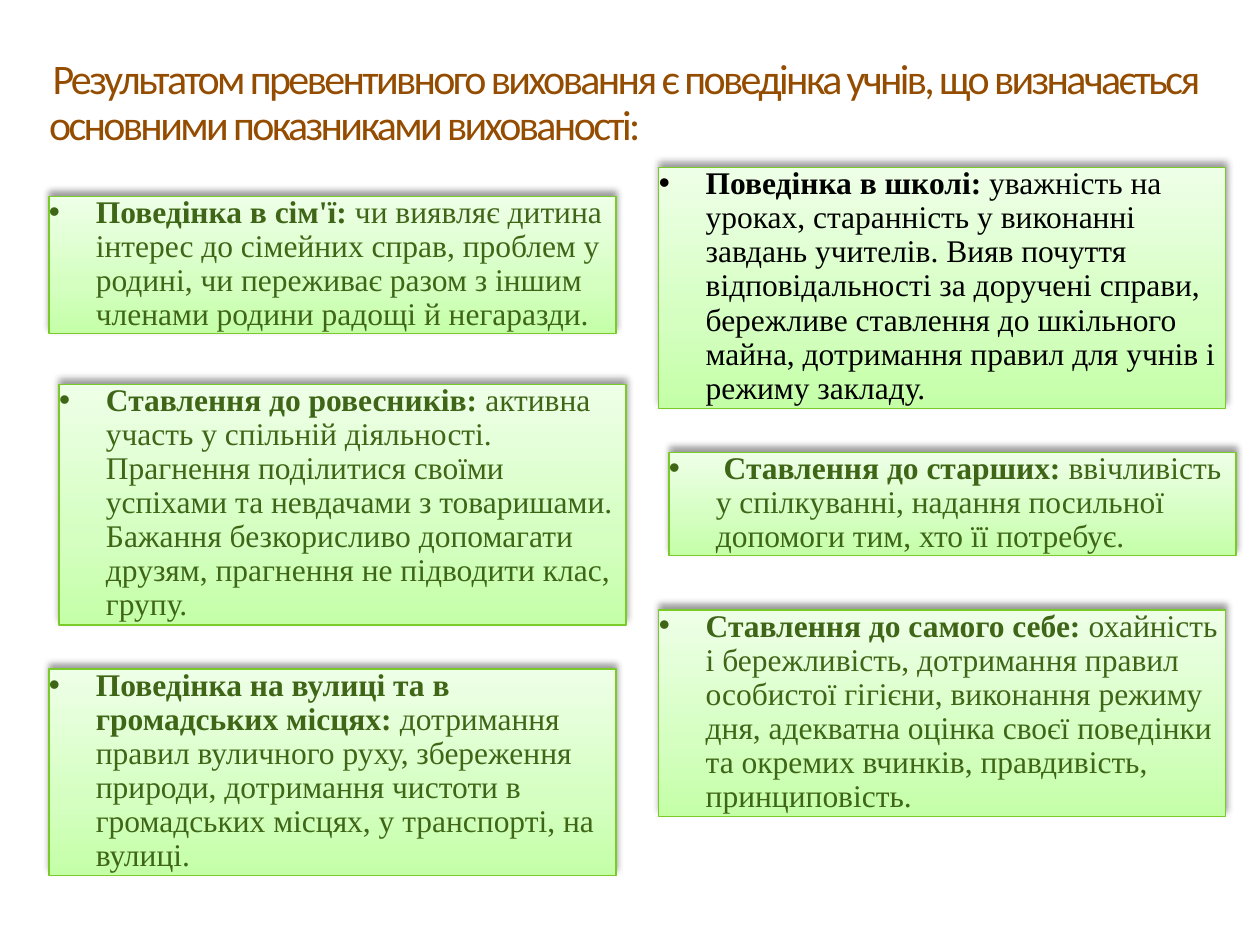
"""Build a slide on the behaviour signs that show a pupil's upbringing."""
from copy import deepcopy
from pptx import Presentation, util as u
from pptx.dml.color import RGBColor as Rgb
from pptx.enum import shapes, text
from pptx.oxml import parse_xml
from pptx.oxml.ns import nsdecls, qn

TITLE = ("Результатом превентивного виховання є поведінка учнів, що "
         "визначається основними показниками вихованості:")
CARDS = [
    (28, 112.3, 78.5, "green", "Поведінка в сім'ї:",
     " чи виявляє дитина інтерес до сімейних справ, проблем у родині, чи "
     "переживає разом з іншим членами родини радощі й негаразди."),
    (376.5, 95.8, 137.5, "black", "Поведінка в школі:",
     " уважність на уроках, старанність у виконанні завдань учителів. Вияв "
     "почуття відповідальності за доручені справи, бережливе ставлення до "
     "шкільного майна, дотримання правил для учнів і режиму закладу."),
    (382.3, 258.5, 59, "green", " Ставлення до старших:",
     " ввічливість у спілкуванні, надання посильної допомоги тим, хто її "
     "потребує."),
    (33.8, 219.6, 137.5, "green", "Ставлення до ровесників:",
     " активна участь у спільній діяльності. Прагнення поділитися своїми "
     "успіхами та невдачами з товаришами. Бажання безкорисливо допомагати "
     "друзям, прагнення не підводити клас, групу."),
    (28, 382.3, 118, "green", "Поведінка на вулиці та в громадських місцях:",
     " дотримання правил вуличного руху, збереження природи, дотримання "
     "чистоти в громадських місцях, у транспорті, на вулиці."),
    (376.5, 348.5, 118, "green", "Ставлення до самого себе:",
     " охайність і бережливість, дотримання правил особистої гігієни, "
     "виконання режиму дня, адекватна оцінка своєї поведінки та окремих "
     "вчинків, правдивість, принциповість."),
]
THEME = {
    "brown": "944D00", "green": "3F6617", "black": "000000", "edge": "7ACB29",
    "fade": [(0, "C4FFA7"), (0.35, "D4FFC0"), (1, "EEFFE7")],
    "head": 24, "body": 18, "sans": "Calibri", "serif": "Times New Roman",
}
WIDE = 324
HANG = 26.8
SHADE = (f'<a:outerShdw {nsdecls("a")} blurRad="{u.Pt(4)}" dist="{u.Pt(3)}" '
         'dir="16200000" rotWithShape="0"><a:srgbClr val="000000">'
         '<a:alpha val="40000"/></a:srgbClr></a:outerShdw>')


def write(shape, runs, font, size, color, left=0, first=0, bullet=None,
          track=0):
    frame = shape.text_frame
    frame.word_wrap = True
    frame.auto_size = text.MSO_AUTO_SIZE.NONE
    frame.vertical_anchor = text.MSO_ANCHOR.TOP
    frame.margin_left = frame.margin_right = 0
    frame.margin_top = frame.margin_bottom = 0
    para = frame.paragraphs[0]
    para.alignment = text.PP_ALIGN.LEFT
    para.line_spacing = 0.9
    para.space_before = u.Pt(0)
    props = para._p.get_or_add_pPr()
    props.set("marL", str(u.Pt(left)))
    props.set("indent", str(u.Pt(first)))
    if bullet:
        props.append(parse_xml(
            f'<a:buFont {nsdecls("a")} typeface="Arial"/>'))
        props.append(parse_xml(
            f'<a:buChar {nsdecls("a")} char="{bullet}"/>'))
    for words, bold in runs:
        run = para.add_run()
        run.text = words
        run.font.name, run.font.size = font, u.Pt(size)
        run.font.bold = bold
        run.font.color.rgb = Rgb.from_string(THEME[color])
        if track:
            run.font._element.set("spc", str(int(track * 100)))


def paint(shape):
    fill = shape.fill
    fill.gradient()
    fill.gradient_angle = 90
    stops = shape._element.spPr.find(".//" + qn("a:gsLst"))
    stops.append(deepcopy(stops[0]))
    for stop, (place, color) in zip(fill.gradient_stops, THEME["fade"]):
        stop.position = place
        stop.color.rgb = Rgb.from_string(color)
    shape.line.color.rgb = Rgb.from_string(THEME["edge"])
    shape.line.width = u.Pt(0.75)
    shape.shadow.inherit = False
    shape._element.spPr.find(qn("a:effectLst")).append(parse_xml(SHADE))


def main():
    deck = Presentation()
    deck.slide_width, deck.slide_height = u.Pt(720), u.Pt(540)
    slide = deck.slides.add_slide(deck.slide_layouts[5])
    title = slide.shapes.title
    title.left, title.top = u.Pt(28), u.Pt(33.5)
    title.width, title.height = u.Pt(662), u.Pt(54)
    write(title, [(TITLE, False)], THEME["sans"], THEME["head"], "brown",
          first=2, track=-1.5)
    for left, top, high, color, label, words in CARDS:
        card = slide.shapes.add_shape(
            shapes.MSO_SHAPE.RECTANGLE,
            u.Pt(left), u.Pt(top), u.Pt(WIDE), u.Pt(high))
        paint(card)
        write(card, [(label, True), (words, False)], THEME["serif"],
              THEME["body"], color, left=HANG, first=-HANG, bullet="•")
    deck.save("out.pptx")


if __name__ == "__main__":
    main()
